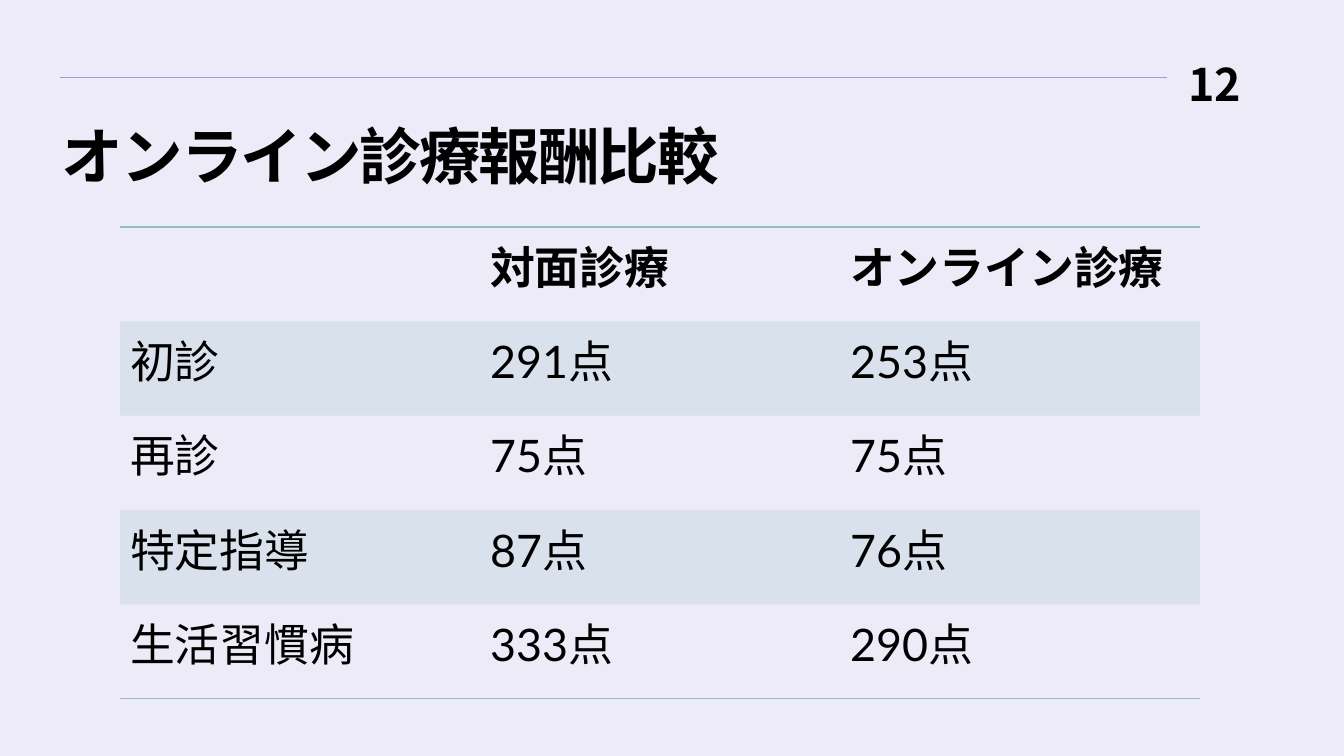
from lxml.etree import SubElement
from pptx import Presentation
from pptx.dml.color import RGBColor
from pptx.enum.shapes import MSO_CONNECTOR
from pptx.enum.text import MSO_ANCHOR, MSO_AUTO_SIZE, PP_ALIGN
from pptx.oxml import parse_xml
from pptx.oxml.ns import nsdecls, qn
from pptx.util import Pt

PX = 12192000 / 1344
CJK = "Noto Sans CJK JP"
TEAL = "8EC0C1"
NO_STYLE = "{2D5ABB26-0587-4C30-8999-92F81FD0307C}"
ROWS = [
    ("", "対面診療", "オンライン診療"),
    ("初診", "291点", "253点"),
    ("再診", "75点", "75点"),
    ("特定指導", "87点", "76点"),
    ("生活習慣病", "333点", "290点"),
]


def px(n):
    return round(n * PX)


def rgb(value):
    return RGBColor.from_string(value)


def put_text(tf, text, size=32, bold=False, font=CJK, color="000000",
             align=PP_ALIGN.LEFT, line=None, spacing=None):
    p = tf.paragraphs[0]
    p.alignment = align
    if line:
        p.line_spacing = line
    r = p.add_run()
    r.text = text
    r.font.size, r.font.bold, r.font.name = Pt(size), bold, font
    r.font.color.rgb = rgb(color)
    rPr = r.font._element
    SubElement(rPr, qn("a:ea")).set("typeface", CJK)
    if spacing:
        rPr.set("spc", str(round(spacing * 100)))


def set_margins(tf, left, top, right, bottom):
    tf.margin_left, tf.margin_top = px(left), px(top)
    tf.margin_right, tf.margin_bottom = px(right), px(bottom)


def add_header(s, x, y, w, h):
    """Rule with the page number at its right end, and the title below."""
    rule = s.shapes.add_connector(MSO_CONNECTOR.STRAIGHT, px(x), px(y + 21),
                                  px(x + w - 74), px(y + 21))
    rule.line.color.rgb = rgb("9F9CD8")
    rule.line.width = Pt(0.75)
    SubElement(rule._element.spPr, qn("a:effectLst"))

    title = s.shapes.title
    title.left, title.top = px(x + 2), px(y + 64)
    title.width, title.height = px(1223), px(h - 64)
    tf = title.text_frame
    tf.word_wrap, tf.auto_size = True, MSO_AUTO_SIZE.NONE
    tf.vertical_anchor = MSO_ANCHOR.TOP
    set_margins(tf, 0, 5, 10, 5)
    put_text(tf, "オンライン診療報酬比較", size=44, bold=True, line=0.9,
             spacing=-1.5)

    number = s.shapes.add_textbox(px(x + w - 101), px(y), px(101), px(53))
    number.text_frame.word_wrap = True
    set_margins(number.text_frame, 0, 0, 0, 0)
    put_text(number.text_frame, "12", bold=True, align=PP_ALIGN.RIGHT)


def set_borders(cell, edges):
    """Draw the named edges (T, B) in teal and hide the others."""
    tcPr = cell._tc.get_or_add_tcPr()
    for i, edge in enumerate("LRTB"):
        paint = "<a:noFill/>"
        if edge in edges:
            paint = f'<a:solidFill><a:srgbClr val="{TEAL}"/></a:solidFill>'
        tcPr.insert(i, parse_xml(
            f'<a:ln{edge} {nsdecls("a")} w="12700">{paint}</a:ln{edge}>'))


def add_fee_table(s, x, y, w, h):
    rows, cols = len(ROWS), len(ROWS[0])
    table = s.shapes.add_table(rows, cols, px(x), px(y), px(w), px(h)).table
    table.first_row = table.horz_banding = False
    table._tbl.tblPr.find(qn("a:tableStyleId")).text = NO_STYLE
    for i, row in enumerate(ROWS):
        table.rows[i].height = px(h / rows)
        edges = "TB" if i == 0 else "B" if i == rows - 1 else ""
        for j, text in enumerate(row):
            cell = table.cell(i, j)
            if i % 2:
                cell.fill.solid()
                cell.fill.fore_color.rgb = rgb(TEAL)
                color = cell._tc.tcPr.find(".//" + qn("a:srgbClr"))
                SubElement(color, qn("a:alpha")).set("val", "20000")
            else:
                cell.fill.background()
            set_borders(cell, edges)
            if text:
                put_text(cell.text_frame, text, bold=i == 0, font="Lato")
    for col in table.columns:
        col.width = px(w / cols)


def main():
    prs = Presentation()
    prs.slide_width, prs.slide_height = px(1344), px(756)
    s = prs.slides.add_slide(prs.slide_layouts[5])
    s.background.fill.solid()
    s.background.fill.fore_color.rgb = rgb("ECEBF7")
    add_header(s, 60, 57, 1181, 197)
    add_fee_table(s, 120, 227, 1080, 472)
    prs.save("out.pptx")


if __name__ == "__main__":
    main()
